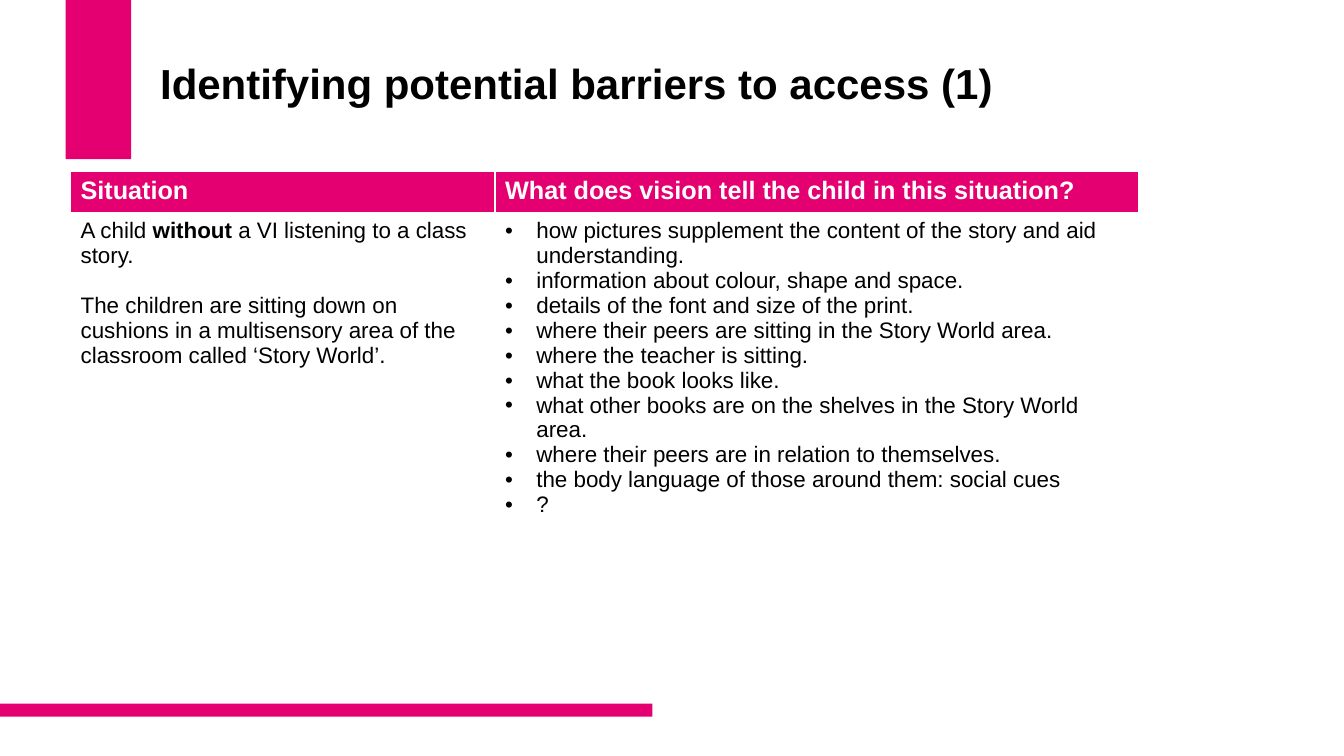
from lxml.etree import SubElement
from pptx import Presentation
from pptx.dml.color import RGBColor
from pptx.enum.shapes import MSO_SHAPE as Preset
from pptx.enum.text import MSO_ANCHOR as Anchor
from pptx.oxml.ns import qn
from pptx.util import Inches, Pt

PINK = RGBColor(0xE5, 0x00, 0x71)
WHITE = RGBColor(0xFF, 0xFF, 0xFF)
BLACK = RGBColor(0x00, 0x00, 0x00)

HEADINGS = ["Situation", "What does vision tell the child in this situation?"]
SITUATION = [
    [("A child ", False), ("without ", True), ("a VI listening to a class story.", False)],
    [("The children are sitting down on cushions in a multisensory area of the "
      "classroom called ‘Story World’.", False)],
]
VISION_TELLS = [
    "how pictures supplement the content of the story and aid understanding.",
    "information about colour, shape and space.",
    "details of the font and size of the print.",
    "where their peers are sitting in the Story World area.",
    "where the teacher is sitting.",
    "what the book looks like.",
    "what other books are on the shelves in the Story World area.",
    "where their peers are in relation to themselves.",
    "the body language of those around them: social cues",
    "?",
]


def add_text(paragraph, text, size=16, color=BLACK, bold=False, font="Arial"):
    run = paragraph.add_run()
    run.text = text
    run.font.name = font
    run.font.size = Pt(size)
    run.font.bold = bold
    run.font.color.rgb = color


def add_bullet(paragraph, indent=0.31):
    properties = paragraph._p.get_or_add_pPr()
    properties.set("marL", str(Inches(indent)))
    properties.set("indent", str(-Inches(indent)))
    SubElement(properties, qn("a:buFont"), typeface="Arial")
    SubElement(properties, qn("a:buChar"), char="•")


def next_paragraph(frame, index):
    return frame.add_paragraph() if index else frame.paragraphs[0]


class SlideBuilder:
    GRID = Inches(0.1)

    def __init__(self, presentation):
        self.slide = presentation.slides.add_slide(presentation.slide_layouts[6])

    def cells(self, *counts):
        return [round(count * self.GRID) for count in counts]

    def bar(self, *place):
        shape = self.slide.shapes.add_shape(Preset.RECTANGLE, *self.cells(*place))
        shape.shadow.inherit = False
        shape.fill.solid()
        shape.fill.fore_color.rgb = PINK
        shape.line.fill.background()

    def title(self, text, *place, bottom_inset):
        frame = self.slide.shapes.add_textbox(*self.cells(*place)).text_frame
        frame.word_wrap = True
        frame.vertical_anchor = Anchor.MIDDLE
        frame.margin_bottom = self.cells(bottom_inset)[0]
        frame.paragraphs[0].line_spacing = 0.9
        add_text(frame.paragraphs[0], text, size=30, bold=True)

    def table(self, left, top, widths, heights):
        place = self.cells(left, top, sum(widths), sum(heights))
        table = self.slide.shapes.add_table(len(heights), len(widths), *place).table
        table.first_row = table.horz_banding = False
        for column, width in zip(table.columns, self.cells(*widths)):
            column.width = width
        for row, height in zip(table.rows, self.cells(*heights)):
            row.height = height
        for index, row in enumerate(table.rows):
            for cell in row.cells:
                self.style_cell(cell, index)
        return table

    def style_cell(self, cell, row_index):
        widths = {"L": 1, "R": 1, "T": 3 if row_index == 1 else 1, "B": 1 if row_index else 3}
        properties = cell._tc.get_or_add_tcPr()
        for side, width in widths.items():
            line = SubElement(properties, qn(f"a:ln{side}"), w=str(Pt(width)))
            fill = SubElement(line, qn("a:solidFill"))
            SubElement(fill, qn("a:srgbClr"), val=str(WHITE))
        cell.fill.solid()
        cell.fill.fore_color.rgb = WHITE if row_index else PINK


def main():
    presentation = Presentation()
    presentation.slide_width = Inches(13.33)
    presentation.slide_height = Inches(7.5)

    builder = SlideBuilder(presentation)
    builder.bar(6.5, 0, 6.5, 15.8)
    builder.bar(0, 69.8, 64.7, 1.3)
    builder.title("Identifying potential barriers to access (1)",
                  14.9, 4, 96, 14.5, bottom_inset=5.9)

    table = builder.table(7, 17, widths=[42.1, 63.8], heights=[4.2, 42.6, 4.2])
    for column, heading in enumerate(HEADINGS):
        paragraph = table.cell(0, column).text_frame.paragraphs[0]
        add_text(paragraph, heading, size=18, color=WHITE, bold=True)

    for index, runs in enumerate(SITUATION):
        paragraph = next_paragraph(table.cell(1, 0).text_frame, index)
        if index:
            paragraph.space_before = Pt(17.9)
        for text, bold in runs:
            add_text(paragraph, text, bold=bold)

    for index, text in enumerate(VISION_TELLS):
        paragraph = next_paragraph(table.cell(1, 1).text_frame, index)
        add_bullet(paragraph)
        add_text(paragraph, text)

    presentation.save("out.pptx")


if __name__ == "__main__":
    main()
